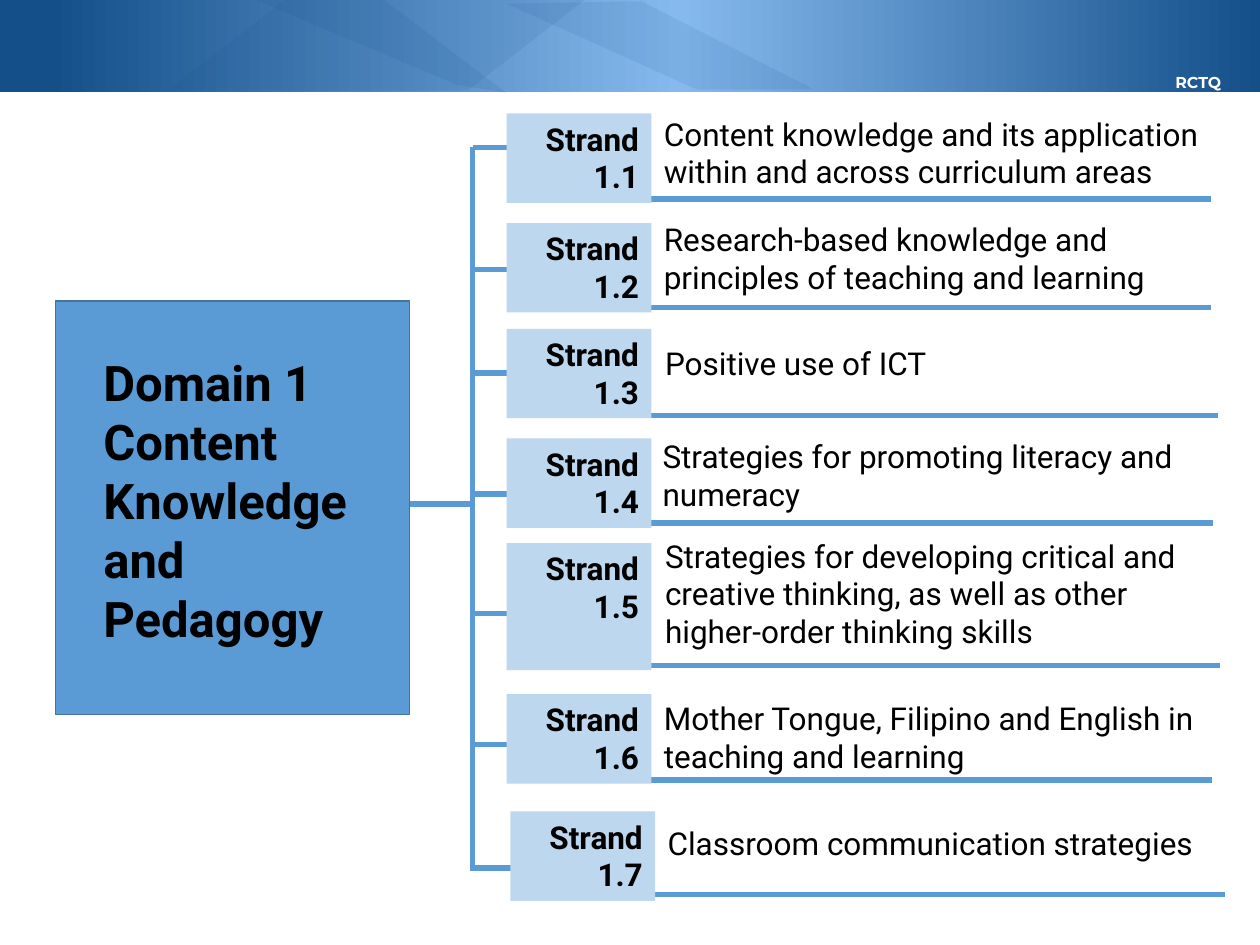
from copy import deepcopy
from lxml.etree import SubElement
from pptx import Presentation
from pptx.dml.color import RGBColor
from pptx.enum.shapes import MSO_CONNECTOR as CONN, MSO_SHAPE as SHAPE
from pptx.enum.text import MSO_ANCHOR as ANCHOR, PP_ALIGN as ALIGN
from pptx.oxml.ns import qn
from pptx.util import Inches, Pt

NAVY, SKY, BLUE, PALE = "144F8A", "86BAEE", "5B9BD5", "BDD7EE"
BLACK, WHITE = "000000", "FFFFFF"

RUNGS = [1.17, 2.14, 2.96, 3.92, 4.87, 5.91]

# label left, top, height; text left, top, width, height; rule start, end, y
STRANDS = [
    ((4.02, 0.9, 0.71), (5.17, 0.86, 4.55, 0.71), (5.14, 9.61, 1.58),
     ["Content knowledge and its application within and across curriculum areas"]),
    ((4.02, 1.77, 0.71), (5.17, 1.7, 4.77, 0.71), (4.81, 9.61, 2.44),
     ["Research-based knowledge and principles of teaching and learning"]),
    ((4.02, 2.61, 0.71), (5.18, 2.68, 4.93, 0.4), (4.82, 9.67, 3.3),
     ["Positive use of ICT"]),
    ((4.02, 3.48, 0.71), (5.16, 3.42, 4.78, 0.71), (4.84, 9.63, 4.15),
     ["Strategies for promoting literacy and numeracy"]),
    ((4.02, 4.31, 1.01), (5.18, 4.21, 4.9, 1.01), (4.87, 9.68, 5.28),
     ["Strategies for developing critical and creative thinking, as well as other",
      "higher-order thinking skills"]),
    ((4.02, 5.51, 0.71), (5.17, 5.5, 4.59, 0.71), (4.83, 9.62, 6.19),
     ["Mother Tongue, Filipino and English in teaching and learning"]),
    ((4.05, 6.44, 0.71), (5.2, 6.49, 4.91, 0.4), (4.9, 9.72, 7.1),
     ["Classroom communication strategies"]),
]


def rgb(hex_color):
    return RGBColor.from_string(hex_color)


def paint(sp, color, alpha=None, outline=None):
    sp.shadow.inherit = False
    sp.fill.solid()
    sp.fill.fore_color.rgb = rgb(color)
    if alpha:
        clr = sp.fill._xPr.find(".//" + qn("a:srgbClr"))
        SubElement(clr, qn("a:alpha")).set("val", str(alpha * 1000))
    if outline:
        sp.line.color.rgb = rgb(outline)
        sp.line.width = Pt(1)
    else:
        sp.line.fill.background()


def add_block(s, kind, box, color, **style):
    sp = s.shapes.add_shape(kind, *map(Inches, box))
    paint(sp, color, **style)
    return sp


def add_facet(s, points):
    fb = s.shapes.build_freeform(*map(Inches, points[0]), scale=1.0)
    fb.add_line_segments([tuple(map(Inches, pt)) for pt in points[1:]])
    paint(fb.convert_to_shape(), NAVY, alpha=10)


def add_line(s, x1, y1, x2, y2):
    line = s.shapes.add_connector(CONN.STRAIGHT, *map(Inches, (x1, y1, x2, y2)))
    line.line.color.rgb = rgb(BLUE)
    line.line.width = Pt(3)
    SubElement(line._element.spPr, qn("a:effectLst"))


def write(sp, paragraphs, size=18, bold=False, align=ALIGN.LEFT, color=BLACK, font="Roboto"):
    tf = sp.text_frame
    tf.word_wrap = True
    tf.vertical_anchor = ANCHOR.TOP
    for i, text in enumerate(paragraphs):
        p = tf.add_paragraph() if i else tf.paragraphs[0]
        p.alignment = align
        p.line_spacing = 1.0
        p.space_before = Pt(0)
        r = p.add_run()
        r.text = text
        r.font.name = font
        r.font.size = Pt(size)
        r.font.bold = bold
        r.font.color.rgb = rgb(color)


def add_text(s, box, paragraphs, **style):
    write(s.shapes.add_textbox(*map(Inches, box)), paragraphs, **style)


def add_banner(s):
    band = add_block(s, SHAPE.RECTANGLE, (0, 0, 10, 0.73), NAVY)
    band.fill.gradient()
    band.fill.gradient_angle = 0
    first = band.fill.gradient_stops[0]._gs
    first.addnext(deepcopy(first))
    stops = [(0.04, NAVY), (0.54, SKY), (1, NAVY)]
    for stop, (position, color) in zip(band.fill.gradient_stops, stops):
        stop.position = position
        stop.color.rgb = rgb(color)
    slant = add_block(s, SHAPE.PARALLELOGRAM, (1.33, 0, 3.31, 0.72), NAVY, alpha=10)
    slant.adjustments[0] = 1.29
    add_facet(s, [(4.02, 0.03), (5.09, 0.01), (6.46, 0.71), (5.53, 0.71)])
    add_facet(s, [(2.03, 0), (3.05, 0), (4.02, 0.74), (3.62, 0.67)])
    add_text(s, (9.04, 0.53, 0.94, 0.25), ["RCTQ"], size=9, bold=True,
             align=ALIGN.CENTER, color=WHITE, font="Montserrat")


def add_tree(s):
    add_line(s, 2.96, 4, 3.75, 4)
    add_line(s, 3.75, RUNGS[0], 3.75, 6.88)
    for y in RUNGS:
        add_line(s, 3.75, y, 4.38, y)
    add_line(s, 3.73, 6.89, 4.36, 6.89)


def add_domain(s):
    add_block(s, SHAPE.RECTANGLE, (0.44, 2.39, 2.81, 3.28), BLUE, outline="43739E")
    title = s.shapes.title
    title.left, title.top, title.width, title.height = map(Inches, (0.72, 2.75, 2.55, 2.45))
    write(title, ["Domain 1", "Content Knowledge", "and Pedagogy"], size=28, bold=True)
    s.shapes._spTree.append(title._element)


def add_strand(s, number, label, text_box, rule, paragraphs):
    add_text(s, text_box, paragraphs)
    start, end, y = rule
    add_line(s, start, y, end, y)
    left, top, height = label
    sp = add_block(s, SHAPE.RECTANGLE, (left, top, 1.15, height), PALE)
    write(sp, [f"Strand 1.{number}"], bold=True, align=ALIGN.RIGHT)


def main():
    prs = Presentation()
    prs.slide_width, prs.slide_height = Inches(10), Inches(7.5)
    s = prs.slides.add_slide(prs.slide_layouts[5])
    add_banner(s)
    add_tree(s)
    add_domain(s)
    for number, strand in enumerate(STRANDS, 1):
        add_strand(s, number, *strand)
    prs.save("out.pptx")


if __name__ == "__main__":
    main()
